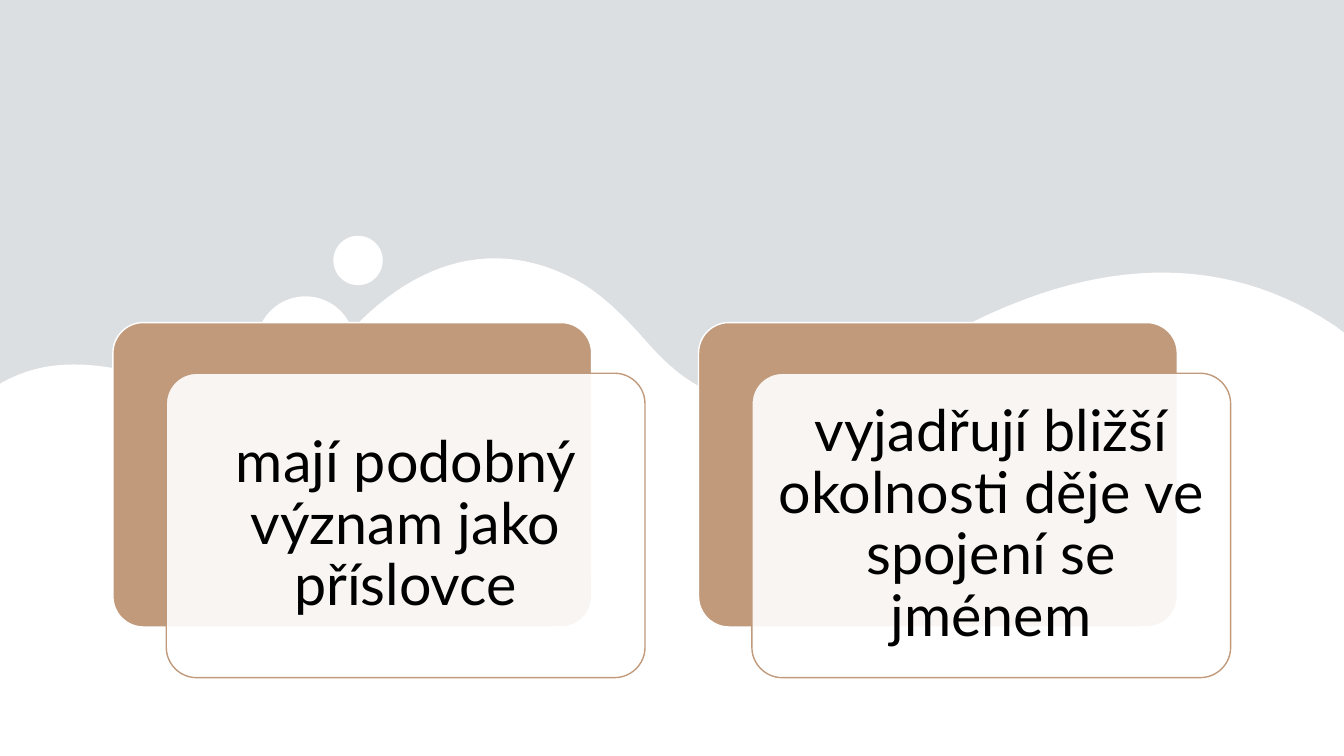
from dataclasses import dataclass
from pptx import Presentation
from pptx.dml.color import RGBColor
from pptx.enum.shapes import MSO_SHAPE
from pptx.enum.text import MSO_ANCHOR, PP_ALIGN
from pptx.oxml.ns import qn
from pptx.util import Pt
from lxml.etree import SubElement


@dataclass(frozen=True)
class Theme:
    background: str = "E2E5E8"
    veil: str = "AEAEAE"
    white: str = "FFFFFF"
    accent: str = "C19A7B"
    text: str = "000000"
    font: str = "Lato"
    text_size: float = 41


THEME = Theme()
SLIDE_WIDTH, SLIDE_HEIGHT = 960, 540
CARD_WIDTH, CARD_HEIGHT = 342, 217.44
CARD_LEFT, CARD_TOP, CARD_PITCH = 80.64, 230.4, 418.32
FRONT_SHIFT_X, FRONT_SHIFT_Y = 38.1, 36.2
CARD_TEXTS = [
    "mají podobný význam jako příslovce",
    "vyjadřují bližší okolnosti děje ve spojení se jménem",
]
BUBBLES = [(238.1, 168.4, 35.3), (182.9, 211.7, 70.6)]
WAVE_START = (0, 274.3)
WAVE_CURVES = [
    [(1.7, 272.9), (3.4, 272.2), (5, 271.4)],
    [(31.7, 257.8), (59, 258.5), (87.8, 264.2)],
    [(118.8, 270.7), (151.2, 275.8), (182.9, 275.8)],
    [(212.4, 276.5), (232.6, 254.2), (252, 234.7)],
    [(299.5, 185), (354.2, 170.6), (409, 198.7)],
    [(430.6, 209.5), (448.6, 229), (465.1, 247.7)],
    [(509, 297.4), (563, 298.8), (614.2, 272.9)],
    [(650.2, 254.9), (684.7, 232.6), (722.9, 217.4)],
    [(804.2, 184.3), (883.4, 185.8), (953.3, 232.6)],
]
WAVE_END = [(SLIDE_WIDTH, 237.6), (SLIDE_WIDTH, SLIDE_HEIGHT), (0, SLIDE_HEIGHT)]


def style_shape(shape, fill, opacity=100, line=None):
    shape.shadow.inherit = False
    shape.fill.solid()
    shape.fill.fore_color.rgb = RGBColor.from_string(fill)
    if opacity < 100:
        color = shape.fill._xPr.find(qn("a:solidFill"))[0]
        SubElement(color, qn("a:alpha")).set("val", str(opacity * 1000))
    if line:
        shape.line.color.rgb = RGBColor.from_string(line)
        shape.line.width = Pt(1)
    else:
        shape.line.fill.background()


def add_block(slide, kind, left, top, width, height, fill, **style):
    shape = slide.shapes.add_shape(kind, Pt(left), Pt(top), Pt(width), Pt(height))
    style_shape(shape, fill, **style)
    return shape


def curve_points(start, first, second, end, steps=24):
    for step in range(1, steps + 1):
        t = step / steps
        weights = ((1 - t) ** 3, 3 * t * (1 - t) ** 2, 3 * t * t * (1 - t), t ** 3)
        yield tuple(
            sum(weight * value for weight, value in zip(weights, values))
            for values in zip(start, first, second, end)
        )


def add_wave(slide):
    points = [WAVE_START]
    for curve in WAVE_CURVES:
        points.extend(curve_points(points[-1], *curve))
    points.extend(WAVE_END)
    start, *rest = [(Pt(x), Pt(y)) for x, y in points]
    builder = slide.shapes.build_freeform(*start, scale=1.0)
    builder.add_line_segments(rest, close=True)
    style_shape(builder.convert_to_shape(), THEME.white)


def write_text(shape, text):
    frame = shape.text_frame
    frame.text = text
    frame.word_wrap = True
    frame.vertical_anchor = MSO_ANCHOR.MIDDLE
    frame.margin_left = frame.margin_right = Pt(12.24)
    frame.margin_top = frame.margin_bottom = Pt(12.24)
    paragraph = frame.paragraphs[0]
    paragraph.alignment = PP_ALIGN.CENTER
    paragraph.line_spacing = 0.9
    font = paragraph.runs[0].font
    font.name = THEME.font
    font.size = Pt(THEME.text_size)
    font.color.rgb = RGBColor.from_string(THEME.text)


def add_card(slide, left, text):
    back = add_block(slide, MSO_SHAPE.ROUNDED_RECTANGLE, left, CARD_TOP,
                     CARD_WIDTH, CARD_HEIGHT, THEME.accent, line=THEME.white)
    front = add_block(slide, MSO_SHAPE.ROUNDED_RECTANGLE,
                      left + FRONT_SHIFT_X, CARD_TOP + FRONT_SHIFT_Y,
                      CARD_WIDTH, CARD_HEIGHT, THEME.white,
                      opacity=90, line=THEME.accent)
    for shape in (back, front):
        shape.adjustments[0] = 0.1
    write_text(front, text)


def main():
    presentation = Presentation()
    presentation.slide_width = Pt(SLIDE_WIDTH)
    presentation.slide_height = Pt(SLIDE_HEIGHT)
    slide = presentation.slides.add_slide(presentation.slide_layouts[6])
    slide.background.fill.solid()
    slide.background.fill.fore_color.rgb = RGBColor.from_string(THEME.background)
    add_block(slide, MSO_SHAPE.RECTANGLE, 0, 0, SLIDE_WIDTH, SLIDE_HEIGHT,
              THEME.veil, opacity=10)
    add_wave(slide)
    for left, top, diameter in BUBBLES:
        add_block(slide, MSO_SHAPE.OVAL, left, top, diameter, diameter, THEME.white)
    for index, text in enumerate(CARD_TEXTS):
        add_card(slide, CARD_LEFT + index * CARD_PITCH, text)
    presentation.save("out.pptx")


if __name__ == "__main__":
    main()
